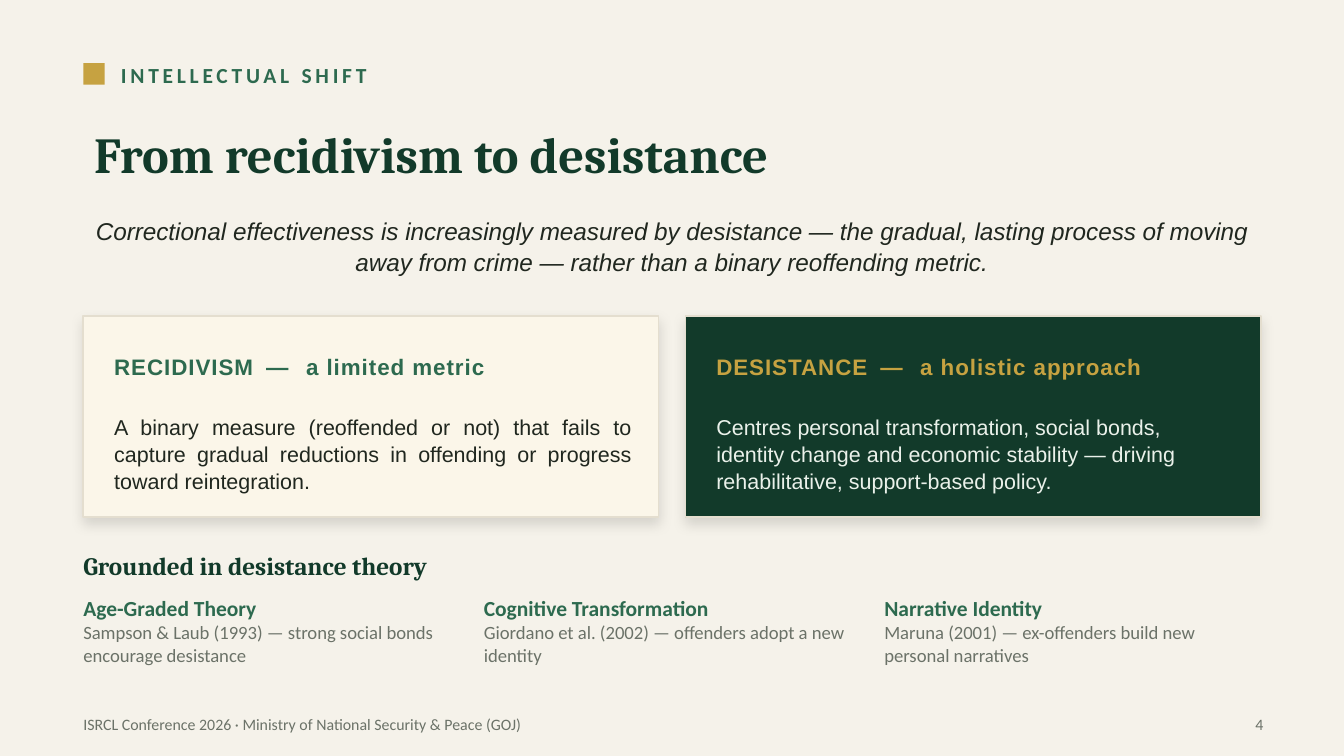
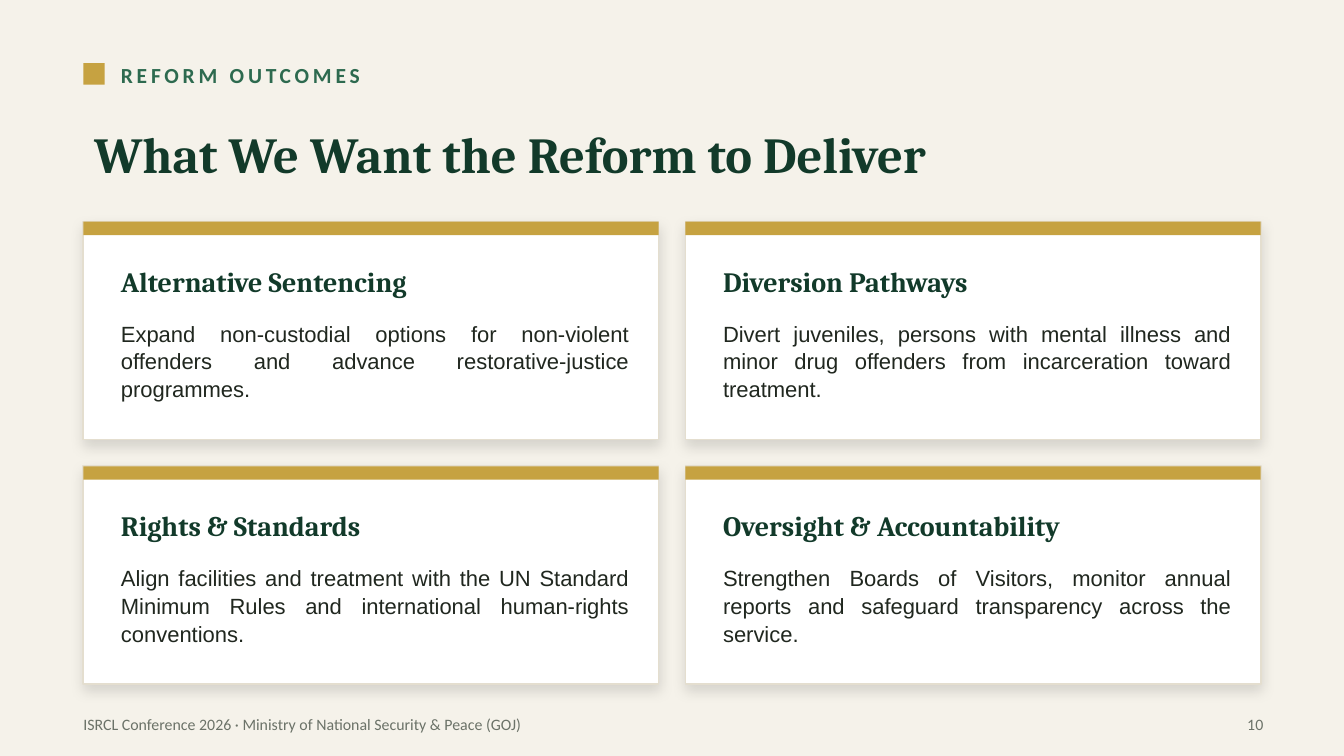
import pptx
import pptx.dml.color
import pptx.enum.shapes
import pptx.enum.text
import pptx.oxml
import pptx.oxml.ns
import pptx.util

Inches = pptx.util.Inches
Pt = pptx.util.Pt
Align = pptx.enum.text.PP_ALIGN
Anchor = pptx.enum.text.MSO_ANCHOR
color = pptx.dml.color.RGBColor.from_string

# Shared palette
PAPER, WHITE, CREAM, BORDER = "F5F2EA", "FFFFFF", "FBF6E9", "E4DECF"
FOREST, GREEN, MINT, GOLD = "123A2A", "2D6A4F", "EAF1EA", "C6A241"
INK, GREY = "20271F", "6B7268"

# Shared grid, in inches
WIDTH = 10
HEIGHT = WIDTH * 9 / 16
MARGIN, GAP = 0.62, 0.2
CARD_WIDTH = 4.28
CARD_STEP = CARD_WIDTH + GAP
INDENT = 0.28

SHADOW = (
    '<a:outerShdw %s blurRad="%d" dist="%d" dir="5400000" algn="bl" rotWithShape="0">'
    '<a:srgbClr val="000000"><a:alpha val="12000"/></a:srgbClr></a:outerShdw>'
    % (pptx.oxml.ns.nsdecls("a"), Pt(7), Pt(3))
)


def add_text(page, text, left, top, width, height, size, font, ink, bold=False, italic=False,
             align=Align.LEFT, anchor=Anchor.MIDDLE, line_spacing=None, tracking=0):
    """Add a text box without insets and return its paragraph."""
    box = page.shapes.add_textbox(Inches(left), Inches(top), Inches(width), Inches(height))
    frame = box.text_frame
    frame.word_wrap = True
    frame.vertical_anchor = anchor
    frame.margin_left = frame.margin_right = frame.margin_top = frame.margin_bottom = 0
    para = frame.paragraphs[0]
    para.alignment = align
    para.line_spacing = line_spacing
    para.font.name, para.font.size = font, Pt(size)
    para.font.bold, para.font.italic = bold, italic
    para.font.color.rgb = color(ink)
    span = para.add_run()
    span.text = text
    if tracking:
        span.font._element.set("spc", str(int(tracking * 100)))
    return para


def add_box(page, left, top, width, height, fill, card=False):
    """Add a plain rectangle; a card also has a border and a soft shadow."""
    box = page.shapes.add_shape(pptx.enum.shapes.MSO_SHAPE.RECTANGLE,
                                Inches(left), Inches(top), Inches(width), Inches(height))
    box.fill.solid()
    box.fill.fore_color.rgb = color(fill)
    box.shadow.inherit = False
    if card:
        box.line.color.rgb = color(BORDER)
        box.line.width = Pt(1)
        effects = box._element.spPr.find(pptx.oxml.ns.qn("a:effectLst"))
        effects.append(pptx.oxml.parse_xml(SHADOW))
    else:
        box.line.fill.background()


deck = pptx.Presentation()
deck.slide_width, deck.slide_height = Inches(WIDTH), Inches(HEIGHT)
background = deck.slide_master.background.fill
background.solid()
background.fore_color.rgb = color(PAPER)

# Header and footer of every slide
headers = [
    ("INTELLECTUAL SHIFT", "From recidivism to desistance", "4"),
    ("REFORM OUTCOMES", "What We Want the Reform to Deliver", "10"),
]
for section, heading, number in headers:
    page = deck.slides.add_slide(deck.slide_layouts[5])
    add_box(page, MARGIN, 0.47, 0.16, 0.16, GOLD)
    add_text(page, section, MARGIN + INDENT, 0.42, 8, 0.28, 11.5, "Calibri", GREEN,
             bold=True, tracking=2)

    title = page.shapes.title
    title.left, title.top = Inches(0.6), Inches(0.78)
    title.width, title.height = Inches(8.9), Inches(0.72)
    title.text_frame.text = heading
    title.text_frame.auto_size = pptx.enum.text.MSO_AUTO_SIZE.NONE
    title.text_frame.vertical_anchor = Anchor.MIDDLE
    para = title.text_frame.paragraphs[0]
    para.alignment = Align.LEFT
    para.font.name, para.font.size, para.font.bold = "Cambria", Pt(27), True
    para.font.color.rgb = color(FOREST)

    add_text(page, number, 9, 5.24, 0.4, 0.3, 8.5, "Calibri", GREY, align=Align.RIGHT)
    add_text(page, "ISRCL Conference 2026 · Ministry of National Security & Peace (GOJ)",
             MARGIN, 5.24, 3.49, 0.3, 8.5, "Calibri", GREY)

shift_page, outcomes_page = deck.slides

# Intellectual shift: lead sentence
add_text(shift_page,
         "Correctional effectiveness is increasingly measured by desistance — the gradual, "
         "lasting process of moving away from crime — rather than a binary reoffending metric.",
         MARGIN, 1.5, 8.75, 0.65, 13, "Arial", INK, italic=True,
         align=Align.CENTER, line_spacing=1.06)

# Intellectual shift: the two concepts side by side
concepts = [
    ("RECIDIVISM", "a limited metric",
     "A binary measure (reoffended or not) that fails to capture gradual reductions in "
     "offending or progress toward reintegration.",
     CREAM, GREEN, INK, Align.JUSTIFY),
    ("DESISTANCE", "a holistic approach",
     "Centres personal transformation, social bonds, identity change and economic stability "
     "— driving rehabilitative, support-based policy.",
     FOREST, GOLD, MINT, Align.LEFT),
]
for column, (concept, summary, body, fill, accent, ink, align) in enumerate(concepts):
    left = MARGIN + column * CARD_STEP
    add_box(shift_page, left, 2.35, CARD_WIDTH, 1.5, fill, card=True)
    para = add_text(shift_page, concept, left + 0.23, 2.55, 3.9, 0.35, 12, "Arial", accent,
                    bold=True, tracking=0.5)
    # The dash is tracked wider to set the concept apart from its summary
    for text, tracking in [(" — ", 3), (summary, 0.5)]:
        span = para.add_run()
        span.text = text
        span.font._element.set("spc", str(int(tracking * 100)))
    add_text(shift_page, body, left + 0.23, 2.97, 3.85, 0.8, 11.5, "Arial", ink,
             align=align, line_spacing=1.05)

# Intellectual shift: supporting theories in three columns
add_text(shift_page, "Grounded in desistance theory", MARGIN, 4.05, 8, 0.32,
         13.5, "Cambria", FOREST, bold=True)
theories = [
    ("Age-Graded Theory", "Sampson & Laub (1993) — strong social bonds encourage desistance"),
    ("Cognitive Transformation", "Giordano et al. (2002) — offenders adopt a new identity"),
    ("Narrative Identity", "Maruna (2001) — ex-offenders build new personal narratives"),
]
for column, (theory, finding) in enumerate(theories):
    para = add_text(shift_page, theory, MARGIN + column * 2.98, 4.42, 2.79, 0.75,
                    11.5, "Calibri", GREEN, bold=True, anchor=Anchor.TOP, line_spacing=1.03)
    para.add_line_break()
    span = para.add_run()
    span.text = finding
    span.font.size, span.font.bold = Pt(10), False
    span.font.color.rgb = color(GREY)

# Reform outcomes: two by two cards
outcomes = [
    ("Alternative Sentencing",
     "Expand non-custodial options for non-violent offenders and advance "
     "restorative-justice programmes."),
    ("Diversion Pathways",
     "Divert juveniles, persons with mental illness and minor drug offenders from "
     "incarceration toward treatment."),
    ("Rights & Standards",
     "Align facilities and treatment with the UN Standard Minimum Rules and international "
     "human-rights conventions."),
    ("Oversight & Accountability",
     "Strengthen Boards of Visitors, monitor annual reports and safeguard transparency "
     "across the service."),
]
CARD_HEIGHT = 1.62
for index, (outcome, body) in enumerate(outcomes):
    row, column = divmod(index, 2)
    left = MARGIN + column * CARD_STEP
    top = 1.65 + row * (CARD_HEIGHT + GAP)
    add_box(outcomes_page, left, top, CARD_WIDTH, CARD_HEIGHT, WHITE, card=True)
    add_box(outcomes_page, left, top, CARD_WIDTH, 0.1, GOLD)
    add_text(outcomes_page, outcome, left + INDENT, top + 0.24, 3.78, 0.4,
             15, "Cambria", FOREST, bold=True)
    add_text(outcomes_page, body, left + INDENT, top + 0.72, 3.78, 0.8, 11.8, "Arial", INK,
             align=Align.JUSTIFY, anchor=Anchor.TOP, line_spacing=1.06)

deck.save("out.pptx")
